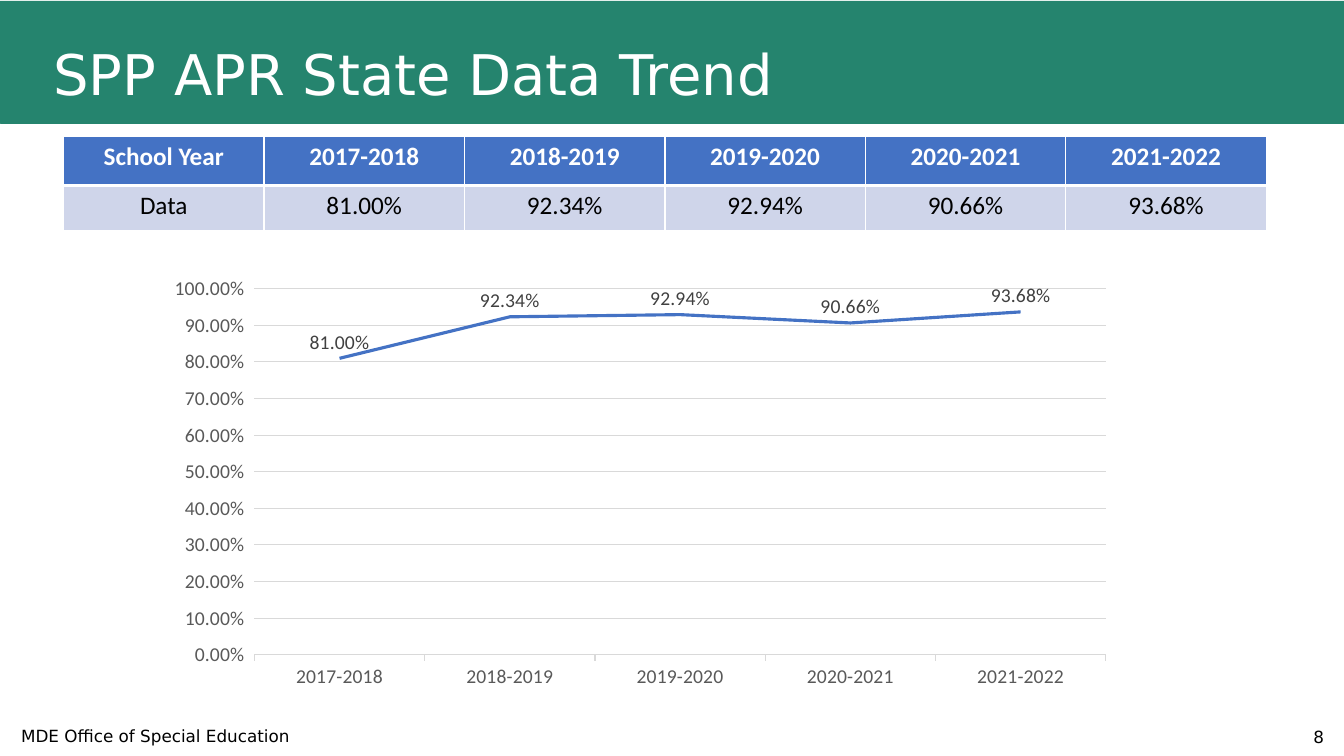
from lxml.etree import SubElement
from pptx import Presentation
from pptx.chart.data import CategoryChartData
from pptx.dml.color import RGBColor
from pptx.enum.chart import XL_CHART_TYPE, XL_LABEL_POSITION, XL_TICK_MARK
from pptx.enum.shapes import MSO_SHAPE
from pptx.enum.text import MSO_ANCHOR, PP_ALIGN
from pptx.oxml.ns import qn
from pptx.util import Inches, Pt

COLORS = {
    "band": "25846E",
    "accent": "4472C4",
    "row": "CFD5EA",
    "grid": "D9D9D9",
    "axis": "595959",
    "label": "404040",
    "white": "FFFFFF",
    "black": "000000",
}
TREND = {
    "2017-2018": 0.81,
    "2018-2019": 0.9234,
    "2019-2020": 0.9294,
    "2020-2021": 0.9066,
    "2021-2022": 0.9368,
}


class TrendPage:
    heading_font = "DejaVu Sans"
    data_font = "Calibri"
    percent = "0.00%"

    def __init__(self, deck):
        self.width, self.height = deck.slide_width, deck.slide_height
        self.page = deck.slides.add_slide(deck.slide_layouts[6])

    def place(self, left, top, width, height):
        across, down = self.width / 100, self.height / 100
        return [round(share * unit) for share, unit in
                zip((left, top, width, height), (across, down, across, down))]

    def color(self, name):
        return RGBColor.from_string(COLORS[name])

    def style(self, font, name, size, color, bold=False):
        font.name, font.size, font.bold = name, Pt(size), bold
        font.color.rgb = self.color(color)

    def line(self, line, color, width):
        line.color.rgb = self.color(color)
        line.width = Pt(width)

    def band(self, *area):
        band = self.page.shapes.add_shape(MSO_SHAPE.RECTANGLE, *self.place(*area))
        band.shadow.inherit = False
        band.fill.solid()
        band.fill.fore_color.rgb = self.color("band")
        self.line(band.line, "band", 0.5)

    def text(self, words, area, size, color="black", align=PP_ALIGN.LEFT, spacing=1.0):
        box = self.page.shapes.add_textbox(*self.place(*area))
        frame = box.text_frame
        frame.word_wrap = True
        frame.vertical_anchor = MSO_ANCHOR.MIDDLE
        frame.text = words
        para = frame.paragraphs[0]
        para.alignment, para.line_spacing = align, spacing
        self.style(para.runs[0].font, self.heading_font, size, color)

    def cell(self, cell, words, fill, color, bold, borders):
        properties = cell._tc.get_or_add_tcPr()
        for side, width in borders.items():
            border = SubElement(properties, qn(f"a:ln{side}"), w=str(Pt(width)))
            paint = SubElement(border, qn("a:solidFill"))
            SubElement(paint, qn("a:srgbClr"), val=COLORS["white"])
        cell.fill.solid()
        cell.fill.fore_color.rgb = self.color(fill)
        cell.text = words
        para = cell.text_frame.paragraphs[0]
        para.alignment = PP_ALIGN.CENTER
        self.style(para.runs[0].font, self.data_font, 18, color, bold)

    def table(self, trend, area, row_shares):
        header = ["School Year", *trend]
        data = ["Data", *(f"{value:.2%}" for value in trend.values())]
        looks = [
            ("accent", "white", True, {"L": 1, "R": 1, "T": 1, "B": 3}),
            ("row", "black", False, {"L": 1, "R": 1, "B": 1}),
        ]
        table = self.page.shapes.add_table(2, len(header), *self.place(*area)).table
        for row, share in zip(table.rows, row_shares):
            row.height = round(self.height * share / 100)
        for row, (texts, look) in enumerate(zip((header, data), looks)):
            for column, words in enumerate(texts):
                self.cell(table.cell(row, column), words, *look)

    def axis(self, axis):
        axis.major_tick_mark = XL_TICK_MARK.OUTSIDE
        axis.minor_tick_mark = XL_TICK_MARK.NONE
        self.style(axis.tick_labels.font, self.data_font, 14, "axis")

    def chart(self, trend, area):
        data = CategoryChartData(number_format=self.percent)
        data.categories = list(trend)
        data.add_series("Series 1", list(trend.values()))
        chart = self.page.shapes.add_chart(
            XL_CHART_TYPE.LINE, *self.place(*area), data).chart
        chart.has_title = chart.has_legend = False
        self.style(chart.font, self.data_font, 14, "black")

        years, values = chart.category_axis, chart.value_axis
        self.axis(years)
        self.line(years.format.line, "grid", 0.75)
        self.axis(values)
        values.format.line.fill.background()
        values.minimum_scale, values.maximum_scale, values.major_unit = 0, 1, 0.1
        values.tick_labels.number_format = self.percent
        values.tick_labels.number_format_is_linked = False
        self.line(values.major_gridlines.format.line, "grid", 0.75)

        plot = chart.plots[0]
        plot.vary_by_categories = False
        series = plot.series[0]
        series.smooth = False
        self.line(series.format.line, "accent", 2.25)
        labels = series.data_labels
        labels.show_value = True
        labels.position = XL_LABEL_POSITION.ABOVE
        labels.number_format = self.percent
        labels.number_format_is_linked = False
        self.style(labels.font, self.data_font, 14, "label")


def main():
    deck = Presentation()
    deck.slide_width, deck.slide_height = Inches(13.33), Inches(7.5)
    page = TrendPage(deck)
    page.band(0, 0.13, 100, 16.13)
    page.text("SPP APR State Data Trend", (3.23, 4.13, 93.17, 12.13), 40, "white", spacing=0.9)
    page.table(TREND, (4.73, 18, 89.5, 12.53), (6.53, 6))
    page.chart(TREND, (11.55, 35.47, 72.17, 56.8))
    page.text("MDE Office of Special Education", (0.83, 94.67, 33.76, 5.33), 12)
    page.text("8", (76.74, 94.8, 22.51, 5.2), 12, align=PP_ALIGN.RIGHT)
    deck.save("out.pptx")


if __name__ == "__main__":
    main()
